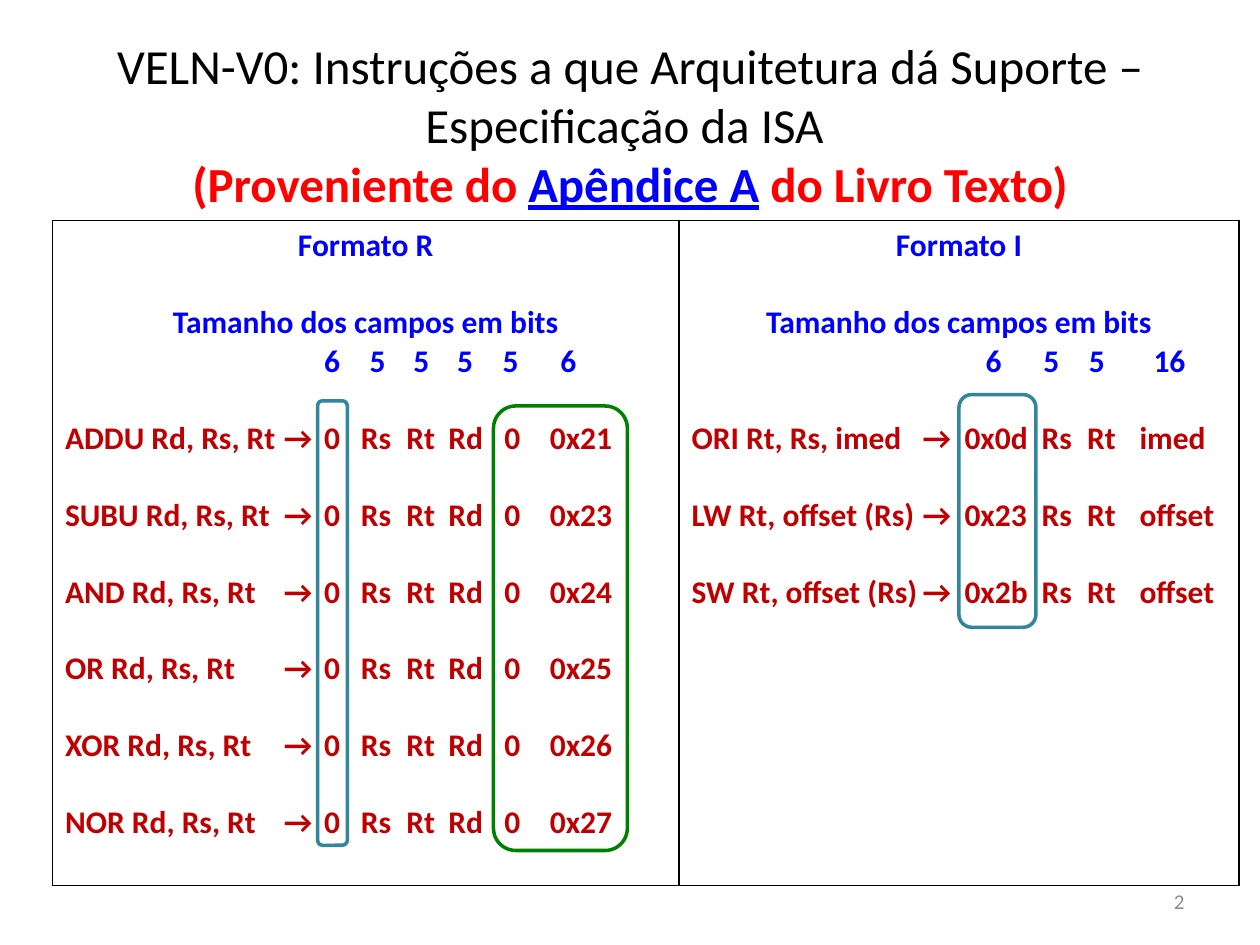
from dataclasses import dataclass

from lxml.etree import SubElement
from pptx import Presentation
from pptx.dml.color import RGBColor
from pptx.enum.shapes import MSO_SHAPE
from pptx.enum.text import MSO_ANCHOR, PP_ALIGN
from pptx.oxml import parse_xml
from pptx.oxml.ns import nsdecls, qn
from pptx.util import Pt


@dataclass(frozen=True)
class Theme:
    font: str = "Calibri"
    black: str = "000000"
    white: str = "FFFFFF"
    red: str = "FF0000"
    blue: str = "0000FF"
    code: str = "C00000"
    grey: str = "8C8C8C"
    teal: str = "31859C"
    green: str = "008000"
    title_size: float = 28
    body_size: float = 18
    number_size: float = 12
    line_gap: float = 22


@dataclass(frozen=True)
class Box:
    left: float
    top: float
    width: float
    height: float


@dataclass(frozen=True)
class Format:
    name: str
    sizes: tuple
    size_stops: tuple
    instructions: tuple
    field_stops: tuple


@dataclass(frozen=True)
class Highlight:
    box: Box
    color: str


THEME = Theme()

R_CODES = (
    ("ADDU", "0x21"), ("SUBU", "0x23"), ("AND", "0x24"),
    ("OR", "0x25"), ("XOR", "0x26"), ("NOR", "0x27"),
)
I_CODES = (
    ("ORI Rt, Rs, imed", "0x0d", "imed"),
    ("LW Rt, offset (Rs)", "0x23", "offset"),
    ("SW Rt, offset (Rs)", "0x2b", "offset"),
)

FORMATS = (
    Format(
        "Formato R",
        ("6", "5", "5", "5", "5", "6"),
        (148, 174, 199, 224, 250, 283),
        tuple((f"{name} Rd, Rs, Rt", "→", "0", "Rs", "Rt", "Rd", "0", code)
              for name, code in R_CODES),
        (125, 148, 169, 195, 219, 251, 277),
    ),
    Format(
        "Formato I",
        ("6", "5", "5", "16"),
        (168, 201, 227, 264),
        tuple((call, "→", code, "Rs", "Rt", last) for call, code, last in I_CODES),
        (132, 156, 200, 226, 256),
    ),
)

HIGHLIGHTS = (
    Highlight(Box(181.5, 229, 17, 254), THEME.teal),
    Highlight(Box(282, 232, 76.5, 254), THEME.green),
    Highlight(Box(548, 225.5, 44, 133), THEME.teal),
)


def write(paragraph, text: str, *, size: float = THEME.body_size, color: str = THEME.black,
          bold: bool = False, underline: bool = False, align=PP_ALIGN.LEFT,
          before: float = 0, stops: tuple = ()) -> None:
    paragraph.alignment = align
    paragraph.space_before = Pt(before)
    if stops:
        tabs = SubElement(paragraph._p.get_or_add_pPr(), qn("a:tabLst"))
        for stop in stops:
            SubElement(tabs, qn("a:tab"), pos=str(Pt(stop)), algn="l")
    run = paragraph.add_run()
    run.text = text
    font = run.font
    font.name = THEME.font
    font.size = Pt(size)
    font.bold = bold
    font.underline = underline
    font.color.rgb = RGBColor.from_string(color)


def add_text_frame(slide, box: Box):
    frame = slide.shapes.add_textbox(
        Pt(box.left), Pt(box.top), Pt(box.width), Pt(box.height)).text_frame
    frame.word_wrap = True
    frame.vertical_anchor = MSO_ANCHOR.MIDDLE
    return frame


def add_title(slide) -> None:
    heading = add_text_frame(slide, Box(36, 21.5, 648, 98.5)).paragraphs[0]
    style = dict(size=THEME.title_size, align=PP_ALIGN.CENTER)
    write(heading, "VELN-V0: Instruções a que Arquitetura dá Suporte – Especificação da ISA ", **style)
    heading.add_line_break()
    write(heading, "(Proveniente do ", color=THEME.red, bold=True, **style)
    write(heading, "Apêndice A", color=THEME.blue, bold=True, underline=True, **style)
    write(heading, " do Livro Texto)", color=THEME.red, bold=True, **style)


def style_cell(cell) -> None:
    cell.fill.solid()
    cell.fill.fore_color.rgb = RGBColor.from_string(THEME.white)
    properties = cell._tc.get_or_add_tcPr()
    for index, side in enumerate(("lnL", "lnR", "lnT", "lnB")):
        properties.insert(index, parse_xml(
            f'<a:{side} {nsdecls("a")} w="{Pt(1)}"><a:solidFill>'
            f'<a:srgbClr val="{THEME.black}"/></a:solidFill></a:{side}>'))


def fill_format(cell, layout: Format) -> None:
    style_cell(cell)
    frame = cell.text_frame
    heading = dict(color=THEME.blue, bold=True)
    write(frame.paragraphs[0], layout.name, align=PP_ALIGN.CENTER, **heading)
    write(frame.add_paragraph(), "Tamanho dos campos em bits",
          align=PP_ALIGN.CENTER, before=THEME.line_gap, **heading)
    write(frame.add_paragraph(), "\t" + "\t".join(layout.sizes),
          stops=layout.size_stops, **heading)
    for fields in layout.instructions:
        write(frame.add_paragraph(), "\t".join(fields), color=THEME.code, bold=True,
              before=THEME.line_gap, stops=layout.field_stops)


def add_formats(slide) -> None:
    widths = (358, 320)
    table = slide.shapes.add_table(
        1, len(FORMATS), Pt(30), Pt(126), Pt(sum(widths)), Pt(380)).table
    table.first_row = False
    table.horz_banding = False
    for column, width in zip(table.columns, widths):
        column.width = Pt(width)
    for cell, layout in zip(table.rows[0].cells, FORMATS):
        fill_format(cell, layout)


def add_highlight(slide, highlight: Highlight) -> None:
    box = highlight.box
    outline = slide.shapes.add_shape(
        MSO_SHAPE.ROUNDED_RECTANGLE,
        Pt(box.left), Pt(box.top), Pt(box.width), Pt(box.height))
    outline.shadow.inherit = False
    outline.fill.background()
    outline.line.color.rgb = RGBColor.from_string(highlight.color)
    outline.line.width = Pt(2)


def main() -> None:
    deck = Presentation()
    deck.slide_width, deck.slide_height = Pt(720), Pt(540)
    slide = deck.slides.add_slide(deck.slide_layouts[6])
    add_title(slide)
    add_formats(slide)
    number = add_text_frame(slide, Box(516, 500.5, 168, 28.5))
    write(number.paragraphs[0], "2", size=THEME.number_size, color=THEME.grey,
          align=PP_ALIGN.RIGHT)
    for highlight in HIGHLIGHTS:
        add_highlight(slide, highlight)
    deck.save("out.pptx")


if __name__ == "__main__":
    main()
